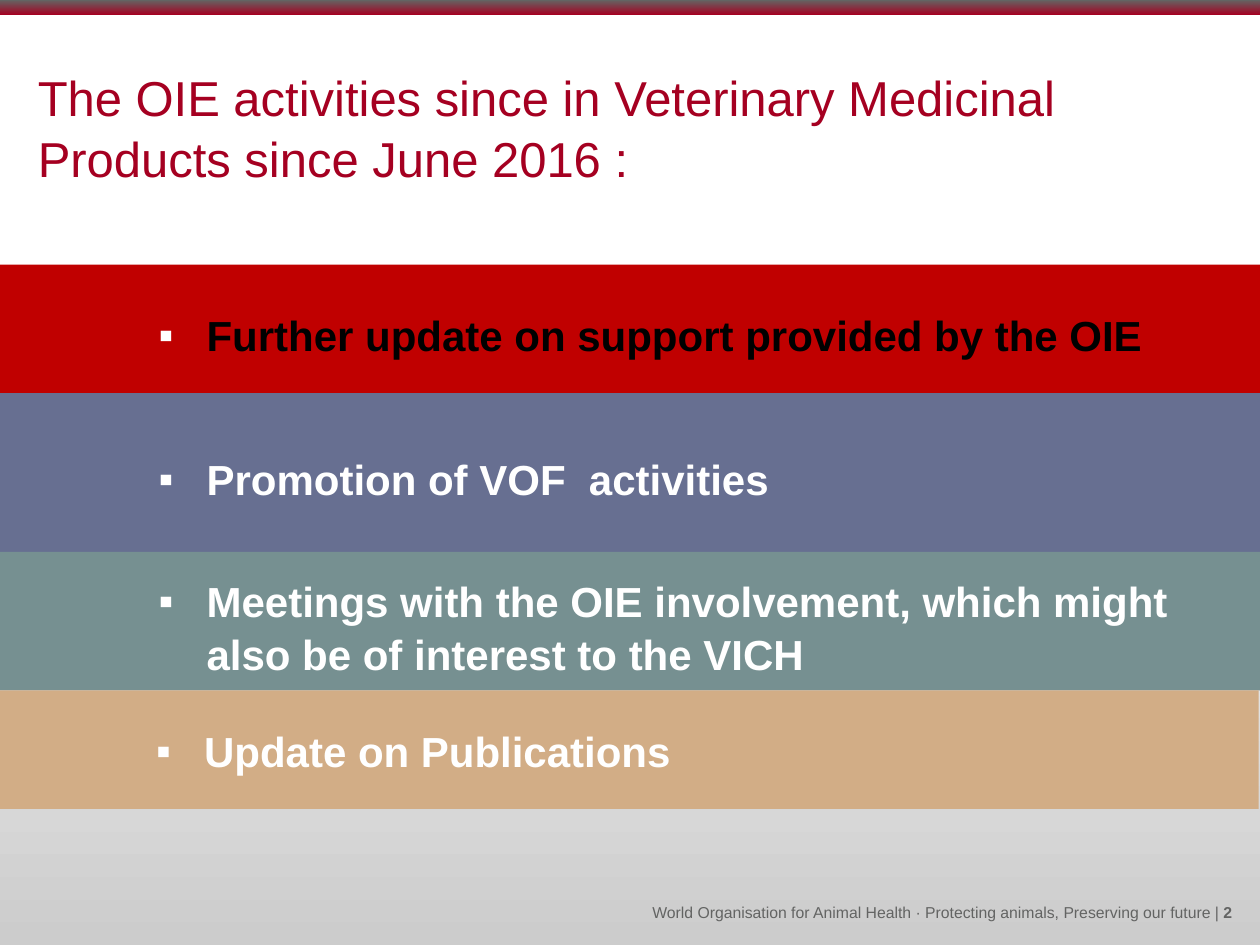
from lxml import etree
from pptx import Presentation
from pptx.dml.color import RGBColor
from pptx.enum.shapes import MSO_SHAPE
from pptx.enum.text import MSO_ANCHOR, MSO_AUTO_SIZE, PP_ALIGN
from pptx.oxml.ns import qn
from pptx.util import Inches, Pt

CRIMSON = RGBColor(0xA5, 0x00, 0x21)
DARK_GRAY = RGBColor(0x63, 0x64, 0x63)
LIGHT_GRAY = RGBColor(0xCC, 0xCC, 0xCC)
WHITE = RGBColor(0xFF, 0xFF, 0xFF)
BLACK = RGBColor(0x00, 0x00, 0x00)
RED = RGBColor(0xC0, 0x00, 0x00)
SLATE = RGBColor(0x67, 0x6F, 0x91)
TEAL = RGBColor(0x76, 0x90, 0x91)
TAN = RGBColor(0xD2, 0xAD, 0x86)


def set_upward_gradient(fill, stops):
    fill.gradient()
    fill.gradient_angle = 90
    for stop, (position, color) in zip(fill.gradient_stops, stops):
        stop.position = position
        stop.color.rgb = color


def place(box, bounds, insets, anchor):
    """Set position, size, insets (left, top, right, bottom) and anchor."""
    for name, value in zip(("left", "top", "width", "height"), bounds):
        setattr(box, name, Inches(value))
    frame = box.text_frame
    frame.word_wrap = True
    frame.auto_size = MSO_AUTO_SIZE.NONE
    frame.vertical_anchor = anchor
    for side, value in zip(("left", "top", "right", "bottom"), insets):
        setattr(frame, f"margin_{side}", Inches(value))


deck = Presentation()
deck.slide_width, deck.slide_height = Inches(10), Inches(7.5)
page = deck.slides.add_slide(deck.slide_layouts.get_by_name("Comparison"))
set_upward_gradient(page.background.fill, [(0, LIGHT_GRAY), (0.6, WHITE)])

# Top bar
bar = page.shapes.add_shape(MSO_SHAPE.RECTANGLE, 0, 0, Inches(10), Inches(0.12))
bar.shadow.inherit = False
bar.line.fill.background()
set_upward_gradient(bar.fill, [(0, CRIMSON), (1, DARK_GRAY)])

# Title
title = page.shapes.title
place(title, (0.2, 0.46, 9.29, 1), (0.1, 0.05, 0.1, 0.05), MSO_ANCHOR.TOP)
title.text = "The OIE activities since in Veterinary Medicinal Products since June 2016 :"
para = title.text_frame.paragraphs[0]
para.alignment = PP_ALIGN.LEFT
para.line_spacing = 1.05
title_format = {"name": "Arial", "size": Pt(28), "bold": False}
for name, value in title_format.items():
    setattr(para.runs[0].font, name, value)
para.runs[0].font.color.rgb = CRIMSON

# Topic bands: left, top, height, top inset, fill, text colour, text
bands = [
    (0, 2.1, 1.1, 0, RED, BLACK, "Further update on support provided by the OIE"),
    (0, 3.12, 1.26, 0.08, SLATE, WHITE, "Promotion of VOF  activities"),
    (0, 4.38, 1.1, 0.08, TEAL, WHITE,
     "Meetings with the OIE involvement, which might also be of interest to the VICH"),
    (-0.02, 5.48, 0.94, 0, TAN, WHITE, "Update on Publications"),
]
band_format = {"name": "Arial", "size": Pt(24), "bold": True}
bodies = [box for box in page.placeholders if box.placeholder_format.idx > 0]
for body, (left, top, height, inset, fill, color, text) in zip(bodies, bands):
    place(body, (left, top, 10.01, height), (1.26, inset, 0.39, 0), MSO_ANCHOR.MIDDLE)
    body.fill.solid()
    body.fill.fore_color.rgb = fill
    body.text = text
    para = body.text_frame.paragraphs[0]
    properties = para._p.get_or_add_pPr()
    properties.set("marL", str(Inches(0.38)))
    properties.set("indent", str(-Inches(0.38)))
    bullet_color = etree.SubElement(properties, qn("a:buClr"))
    etree.SubElement(bullet_color, qn("a:srgbClr"), val=str(WHITE))
    etree.SubElement(properties, qn("a:buFont"), typeface="Arial")
    etree.SubElement(properties, qn("a:buChar"), char="▪")
    para.alignment = PP_ALIGN.LEFT
    para.space_before = Pt(0)
    para.line_spacing = 1.05
    for name, value in band_format.items():
        setattr(para.runs[0].font, name, value)
    para.runs[0].font.color.rgb = color

# Footer
footer = page.shapes.add_textbox(0, 0, 0, 0)
place(footer, (2.55, 7.07, 7.23, 0.31), (0, 0, 0, 0), MSO_ANCHOR.MIDDLE)
para = footer.text_frame.paragraphs[0]
para.alignment = PP_ALIGN.RIGHT
para.line_spacing = 1.2
tagline = "World Organisation for Animal Health · Protecting animals, Preserving our future | "
for text, bold in [(tagline, False), ("2", True)]:
    span = para.add_run()
    span.text = text
    for name, value in {"name": "Arial", "size": Pt(9), "bold": bold}.items():
        setattr(span.font, name, value)
    span.font.color.rgb = DARK_GRAY

deck.save("out.pptx")
